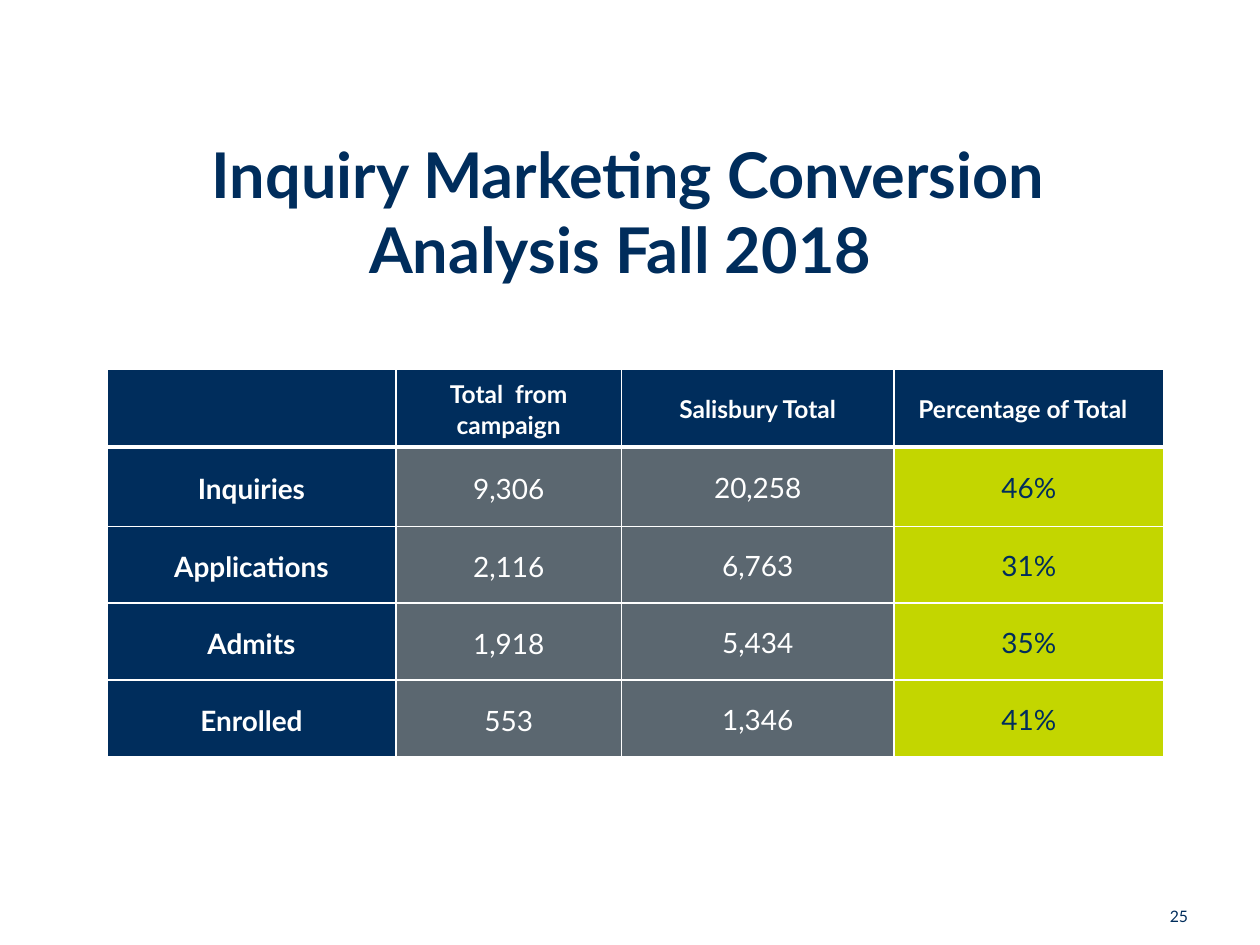
from pptx import Presentation
from pptx.dml.color import RGBColor
from pptx.enum.text import MSO_ANCHOR as Anchor, PP_ALIGN as Align
from pptx.oxml.ns import qn
from pptx.util import Cm, Pt
from lxml.etree import SubElement as Sub

NAVY = RGBColor(0x00, 0x2D, 0x5C)
GREY = RGBColor(0x5B, 0x67, 0x70)
LIME = RGBColor(0xC3, 0xD6, 0x00)
WHITE = RGBColor(0xFF, 0xFF, 0xFF)

WIDTHS = [5.82, 4.55, 5.49, 5.44]
HEIGHTS = [1.57, 1.6, 1.55, 1.55, 1.55]
ROWS = [
    ["", "Total  from campaign", "Salisbury Total", "Percentage of Total  "],
    ["Inquiries", "9,306", "20,258", "46%"],
    ["Applications", "2,116", "6,763", "31%"],
    ["Admits", "1,918", "5,434", "35%"],
    ["Enrolled", "553", "1,346", "41%"],
]
FILLS = [NAVY, GREY, GREY, LIME]


class Deck:
    font = "Lato"

    def __init__(self, wide, high):
        self.deck = Presentation()
        self.deck.slide_width = Cm(wide)
        self.deck.slide_height = Cm(high)
        self.slide = self.deck.slides.add_slide(self.deck.slide_layouts[6])

    def run(self, para, text, size, color, bold=False, align=Align.CENTER):
        para.alignment = align
        run = para.add_run()
        run.text = text
        run.font.name = self.font
        run.font.size = Pt(size)
        run.font.bold = bold
        run.font.color.rgb = color

    def text(self, box, text, size, color, **style):
        frame = self.slide.shapes.add_textbox(*map(Cm, box)).text_frame
        frame.word_wrap = True
        frame.vertical_anchor = Anchor.MIDDLE
        self.run(frame.paragraphs[0], text, size, color, **style)

    def border(self, cell, base):
        props = cell._tc.get_or_add_tcPr()
        for side, width in zip("LRTB", (1, 1, 1, base)):
            line = Sub(props, qn("a:ln" + side), w=str(Pt(width)))
            Sub(Sub(line, qn("a:solidFill")), qn("a:srgbClr"), val=str(WHITE))

    def cell(self, cell, text, row, col):
        head = row == 0
        fill = NAVY if head else FILLS[col]
        self.border(cell, 3 if head else 1)
        cell.fill.solid()
        cell.fill.fore_color.rgb = fill
        cell.vertical_anchor = Anchor.MIDDLE
        side = 0.18 if col < 2 else 0
        cell.margin_left = cell.margin_right = Cm(side)
        cell.margin_top = Cm(0.03 if col < 2 else 0)
        cell.margin_bottom = Cm(0)
        if text:
            para = cell.text_frame.paragraphs[0]
            para.line_spacing = 1.06
            color = NAVY if fill == LIME else WHITE
            self.run(para, text, 14 if head else 16, color, head or col == 0)

    def table(self, left, top, rows, widths, heights):
        box = map(Cm, (left, top, sum(widths), sum(heights)))
        grid = self.slide.shapes.add_table(len(rows), len(widths), *box).table
        for col, width in zip(grid.columns, widths):
            col.width = Cm(width)
        for row, height in zip(grid.rows, heights):
            row.height = Cm(height)
        for r, row in enumerate(rows):
            for c, text in enumerate(row):
                self.cell(grid.cell(r, c), text, r, c)


def main():
    page = Deck(25.4, 19.05)
    page.text((22, 18.16, 2.2, 0.64), "25", 9, NAVY, align=Align.RIGHT)
    page.text((2.51, 3.02, 20.3, 2.46),
              "Inquiry Marketing Conversion Analysis Fall 2018 ", 36, NAVY, bold=True)
    page.table(2.16, 7.44, ROWS, WIDTHS, HEIGHTS)
    page.deck.save("out.pptx")


if __name__ == "__main__":
    main()
